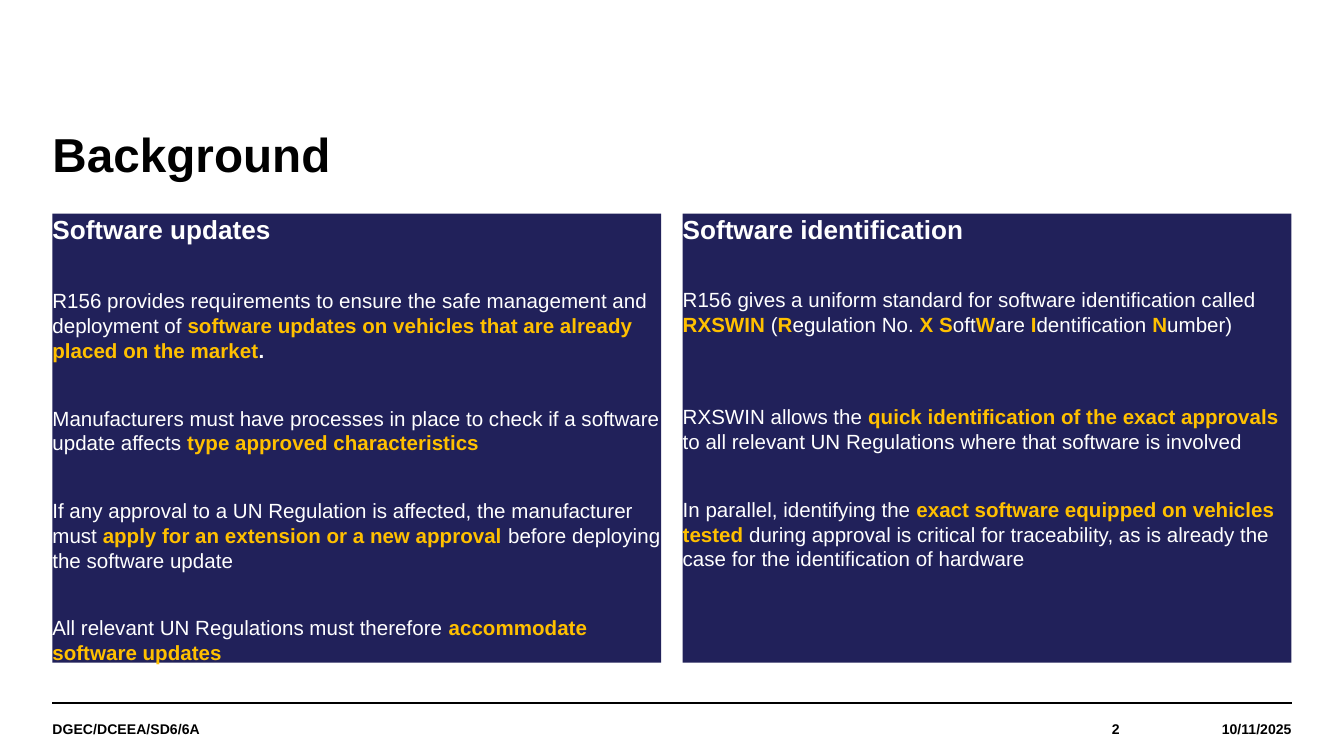
import pptx
import pptx.dml.color
import pptx.enum.shapes
import pptx.enum.text
import pptx.oxml
import pptx.util
from dataclasses import dataclass

Inches = pptx.util.Inches
Pt = pptx.util.Pt
ALIGN = pptx.enum.text.PP_ALIGN
ANCHOR = pptx.enum.text.MSO_ANCHOR


@dataclass(frozen=True)
class Theme:
    font: str = "Arial"
    black: str = "000000"
    white: str = "FFFFFF"
    navy: str = "21215A"
    amber: str = "FFC000"
    title_size: float = 25.5
    heading_size: float = 14
    body_size: float = 11
    footer_size: float = 7.5
    paragraph_gap: float = 23.2


THEME = Theme()
MARGIN, CONTENT_WIDTH, COLUMN_GAP = 0.39, 9.22, 0.16

# Runs are separated by "|"; a leading "*" means highlighted, "^" means bold.
# Each paragraph comes with the space before it, in points.
UPDATES = [
    (THEME.paragraph_gap,
     "R156 provides requirements to ensure the safe management and deployment of "
     "|*software updates on vehicles that are already placed on the market|^."),
    (THEME.paragraph_gap,
     "Manufacturers must have processes in place to check if a software update affects "
     "|*type approved characteristics"),
    (THEME.paragraph_gap,
     "If any approval to a UN Regulation is affected, the manufacturer must "
     "|*apply for an extension or a new approval |before deploying the software update"),
    (THEME.paragraph_gap,
     "All relevant UN Regulations must therefore |*accommodate software updates"),
]
IDENTIFICATION = [
    (22.6,
     "R156 gives a uniform standard for software identification called |*RXSWIN| (|*R|"
     "egulation No. |*X S|oft|*W|are |*I|dentification |*N|umber)"),
    (36.4,
     "RXSWIN allows the |*quick identification of the exact approvals "
     "|to all relevant UN Regulations where that software is involved"),
    (THEME.paragraph_gap,
     "In parallel, identifying the |*exact software equipped on vehicles tested "
     "|during approval is critical for traceability, as is already the case for the "
     "identification of hardware"),
]


def rgb(value):
    return pptx.dml.color.RGBColor.from_string(value)


def apply_format(target, values):
    for name, value in values.items():
        setattr(target, name, value)


def prepare_frame(shape, anchor=ANCHOR.TOP):
    frame = shape.text_frame
    apply_format(frame, {
        "word_wrap": True, "vertical_anchor": anchor,
        "margin_left": 0, "margin_top": 0, "margin_right": 0, "margin_bottom": 0,
    })
    return frame


def add_run(paragraph, text, size, color, bold=True):
    run = paragraph.add_run()
    run.text = text
    apply_format(run.font, {"name": THEME.font, "size": Pt(size), "bold": bold})
    run.font.color.rgb = rgb(color)


def add_label(slide, box, text, size, anchor=ANCHOR.TOP, **paragraph_format):
    shape = slide.shapes.add_textbox(*map(Inches, box))
    paragraph = prepare_frame(shape, anchor).paragraphs[0]
    apply_format(paragraph, paragraph_format)
    add_run(paragraph, text, size, THEME.black)


def add_panel(slide, box, heading, body):
    shape = slide.shapes.add_shape(
        pptx.enum.shapes.MSO_SHAPE.RECTANGLE, *map(Inches, box))
    shape.shadow.inherit = False
    shape.fill.solid()
    shape.fill.fore_color.rgb = rgb(THEME.navy)
    shape.line.fill.background()
    frame = prepare_frame(shape)
    frame.paragraphs[0].alignment = ALIGN.LEFT
    add_run(frame.paragraphs[0], heading, THEME.heading_size, THEME.white)
    for gap, markup in body:
        paragraph = frame.add_paragraph()
        apply_format(paragraph, {"alignment": ALIGN.LEFT, "space_before": Pt(gap)})
        for part in markup.split("|"):
            color = THEME.amber if part.startswith("*") else THEME.white
            add_run(paragraph, part.lstrip("*^"), THEME.body_size, color,
                    part.startswith(("*", "^")))


def add_footer(slide, box):
    left, top, width, height = box
    rule = slide.shapes.add_connector(
        pptx.enum.shapes.MSO_CONNECTOR.STRAIGHT,
        *map(Inches, (left, top, left + width, top)))
    rule.line.color.rgb = rgb(THEME.black)
    rule.line.width = Pt(0.8)
    properties = rule._element.spPr
    properties.append(pptx.oxml.parse_xml(
        '<a:effectLst xmlns:a="http://schemas.openxmlformats.org/drawingml/2006/main"/>'))
    for text, label_width, alignment in (
            ("DGEC/DCEEA/SD6/6A", 6.46, ALIGN.LEFT),
            ("2", 1.48, ALIGN.RIGHT),
            ("10/11/2025", 1.28, ALIGN.RIGHT)):
        add_label(slide, (left, top, label_width, height), text, THEME.footer_size,
                  ANCHOR.MIDDLE, alignment=alignment)
        left += label_width


def main():
    presentation = pptx.Presentation()
    presentation.slide_width = Pt(720)
    presentation.slide_height = Pt(405)
    slide = presentation.slides.add_slide(presentation.slide_layouts[6])

    add_label(slide, (MARGIN, 0.98, CONTENT_WIDTH, 0.79), "Background",
              THEME.title_size, line_spacing=0.9)
    column_width = (CONTENT_WIDTH - COLUMN_GAP) / 2
    for column, (heading, body) in enumerate((
            ("Software updates", UPDATES),
            ("Software identification", IDENTIFICATION))):
        left = MARGIN + column * (column_width + COLUMN_GAP)
        add_panel(slide, (left, 1.59, column_width, 3.34), heading, body)
    add_footer(slide, (MARGIN, 5.23, CONTENT_WIDTH, 0.39))

    presentation.save("out.pptx")


if __name__ == "__main__":
    main()
